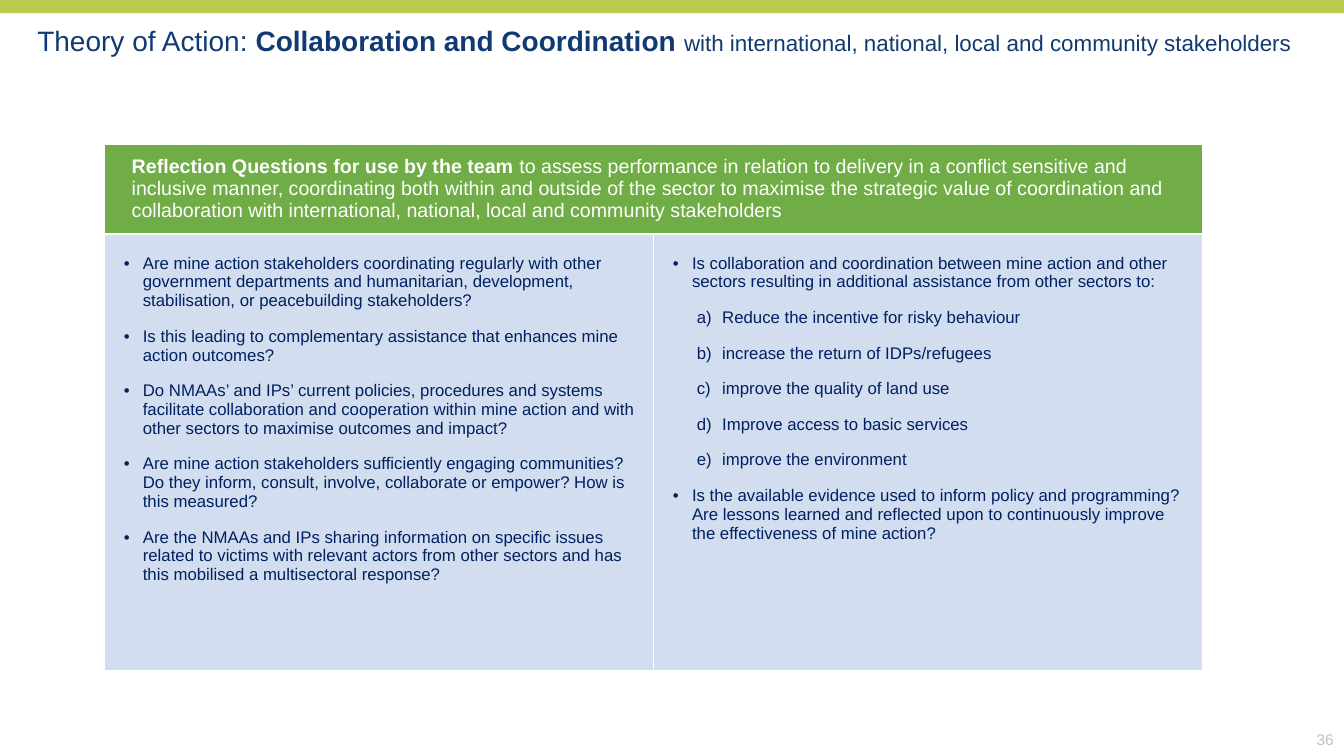
from dataclasses import dataclass

from pptx import Presentation
from pptx.dml.color import RGBColor
from pptx.enum.shapes import MSO_SHAPE
from pptx.enum.text import MSO_ANCHOR, MSO_AUTO_SIZE, PP_ALIGN
from pptx.oxml.ns import qn
from pptx.util import Cm, Pt
from lxml.etree import SubElement

# Content: (text, size key, bold) for runs, (kind, text) for questions
TITLE = [
    ("Theory of Action: ", "title", False),
    ("Collaboration and Coordination ", "title", True),
    ("with international, national, local and community stakeholders", "subtitle", False),
]
HEADER = [
    ("Reflection Questions for use by the team ", "header", True),
    ("to assess performance in relation to delivery in a conflict sensitive and inclusive "
     "manner, coordinating both within and outside of the sector to maximise the strategic "
     "value of coordination and collaboration with international, national, local and "
     "community stakeholders", "header", False),
]
QUESTIONS = [
    [
        ("bullet", "Are mine action stakeholders coordinating regularly with other government "
                   "departments and humanitarian, development, stabilisation, or peacebuilding "
                   "stakeholders?"),
        ("bullet", "Is this leading to complementary assistance that enhances mine action "
                   "outcomes?"),
        ("bullet", "Do NMAAs’ and IPs’ current policies, procedures and systems facilitate "
                   "collaboration and cooperation within mine action and with other sectors to "
                   "maximise outcomes and impact?"),
        ("bullet", "Are mine action stakeholders sufficiently engaging communities? Do they "
                   "inform, consult, involve, collaborate or empower? How is this measured?"),
        ("bullet", "Are the NMAAs and IPs sharing information on specific issues related to "
                   "victims with relevant actors from other sectors and has this mobilised a "
                   "multisectoral response?"),
    ],
    [
        ("bullet", "Is collaboration and coordination between mine action and other sectors "
                   "resulting in additional assistance from other sectors to:"),
        ("letter", "Reduce the incentive for risky behaviour"),
        ("letter", "increase the return of IDPs/refugees"),
        ("letter", "improve the quality of land use"),
        ("letter", "Improve access to basic services"),
        ("letter", "improve the environment"),
        ("bullet", "Is the available evidence used to inform policy and programming? Are "
                   "lessons learned and reflected upon to continuously improve the "
                   "effectiveness of mine action?"),
    ],
]
PAGE_NUMBER = "36"


@dataclass(frozen=True)
class Theme:
    font = "Arial"
    sizes = {"title": 20, "subtitle": 16, "header": 14, "body": 12, "page": 11}
    title = RGBColor(0x10, 0x3A, 0x71)
    body = RGBColor(0x00, 0x20, 0x60)
    white = RGBColor(0xFF, 0xFF, 0xFF)
    page = RGBColor(0xBF, 0xBF, 0xBF)
    band = RGBColor(0xBA, 0xCB, 0x4E)
    header_fill = RGBColor(0x70, 0xAD, 0x47)
    body_fill = RGBColor(0xD2, 0xDE, 0xEF)


THEME = Theme()
# Kind: left margin, hanging indent, marker tag, marker attributes
LISTS = {
    "bullet": (Cm(0.48), Cm(0.48), "a:buChar", {"char": "•"}),
    "letter": (Cm(1.24), Cm(0.64), "a:buAutoNum", {"type": "alphaLcParenR"}),
}


def add_run(p, text, size, color, bold=False):
    r = p.add_run()
    r.text = text
    r.font.name = THEME.font
    r.font.size = Pt(THEME.sizes[size])
    r.font.bold = bold
    r.font.color.rgb = color


def set_margins(obj, left, top, right, bottom):
    obj.margin_left, obj.margin_top = Cm(left), Cm(top)
    obj.margin_right, obj.margin_bottom = Cm(right), Cm(bottom)


def style_cell(cell, fill):
    """Give the cell thin white borders, then its fill, in schema order."""
    tc_pr = cell._tc.get_or_add_tcPr()
    for tag in ("a:lnL", "a:lnR", "a:lnT", "a:lnB"):
        ln = SubElement(tc_pr, qn(tag), w=str(Pt(1)))
        SubElement(SubElement(ln, qn("a:solidFill")), qn("a:srgbClr"), val=str(THEME.white))
    cell.fill.solid()
    cell.fill.fore_color.rgb = fill


def add_list(tf, items):
    for i, (kind, text) in enumerate(items):
        p = tf.add_paragraph() if i else tf.paragraphs[0]
        p.space_after = Pt(12)
        left, hanging, tag, attributes = LISTS[kind]
        p_pr = p._p.get_or_add_pPr()
        p_pr.set("marL", str(left))
        p_pr.set("indent", str(-hanging))
        SubElement(p_pr, qn("a:buFont"), typeface=THEME.font)
        SubElement(p_pr, qn(tag), attributes)
        add_run(p, text, "body", THEME.body)


def add_band(s, width):
    sp = s.shapes.add_shape(MSO_SHAPE.RECTANGLE, 0, 0, width, Cm(0.33))
    sp.shadow.inherit = False
    sp.fill.solid()
    sp.fill.fore_color.rgb = THEME.band
    sp.line.fill.background()


def add_title(s):
    sp = s.shapes.title
    sp.left, sp.top, sp.width, sp.height = Cm(0.94), Cm(0.6), Cm(31.8), Cm(0.86)
    tf = sp.text_frame
    set_margins(tf, 0, 0, 0, 0)
    tf.word_wrap = True
    tf.auto_size = MSO_AUTO_SIZE.NONE
    tf.vertical_anchor = MSO_ANCHOR.TOP
    p = tf.paragraphs[0]
    p.alignment = PP_ALIGN.LEFT
    for text, size, bold in TITLE:
        add_run(p, text, size, THEME.title, bold)


def add_questions(s):
    header_height, body_height = Cm(2.26), Cm(11)
    column_count = len(QUESTIONS)
    table = s.shapes.add_table(2, column_count, Cm(2.62), Cm(3.63), Cm(27.68),
                               header_height + body_height).table
    table.horz_banding = False
    table.rows[0].height, table.rows[1].height = header_height, body_height

    header = table.cell(0, 0)
    header.merge(table.cell(0, column_count - 1))
    set_margins(header, 0.7, 0.3, 0.25, 0.3)
    for text, size, bold in HEADER:
        add_run(header.text_frame.paragraphs[0], text, size, THEME.white, bold)

    for column, items in enumerate(QUESTIONS):
        style_cell(table.cell(0, column), THEME.header_fill)
        cell = table.cell(1, column)
        style_cell(cell, THEME.body_fill)
        set_margins(cell, 0.5, 0.5, 0.25, 0.13)
        add_list(cell.text_frame, items)


def add_page_number(s):
    tf = s.shapes.add_textbox(Cm(32.69), Cm(18.21), Cm(1.17), Cm(0.84)).text_frame
    tf.word_wrap = True
    tf.vertical_anchor = MSO_ANCHOR.MIDDLE
    p = tf.paragraphs[0]
    p.alignment = PP_ALIGN.RIGHT
    add_run(p, PAGE_NUMBER, "page", THEME.page)


def main():
    prs = Presentation()
    prs.slide_width, prs.slide_height = Cm(33.87), Cm(19.05)
    s = prs.slides.add_slide(prs.slide_layouts[5])
    add_band(s, prs.slide_width)
    add_title(s)
    add_questions(s)
    add_page_number(s)
    prs.save("out.pptx")


if __name__ == "__main__":
    main()
